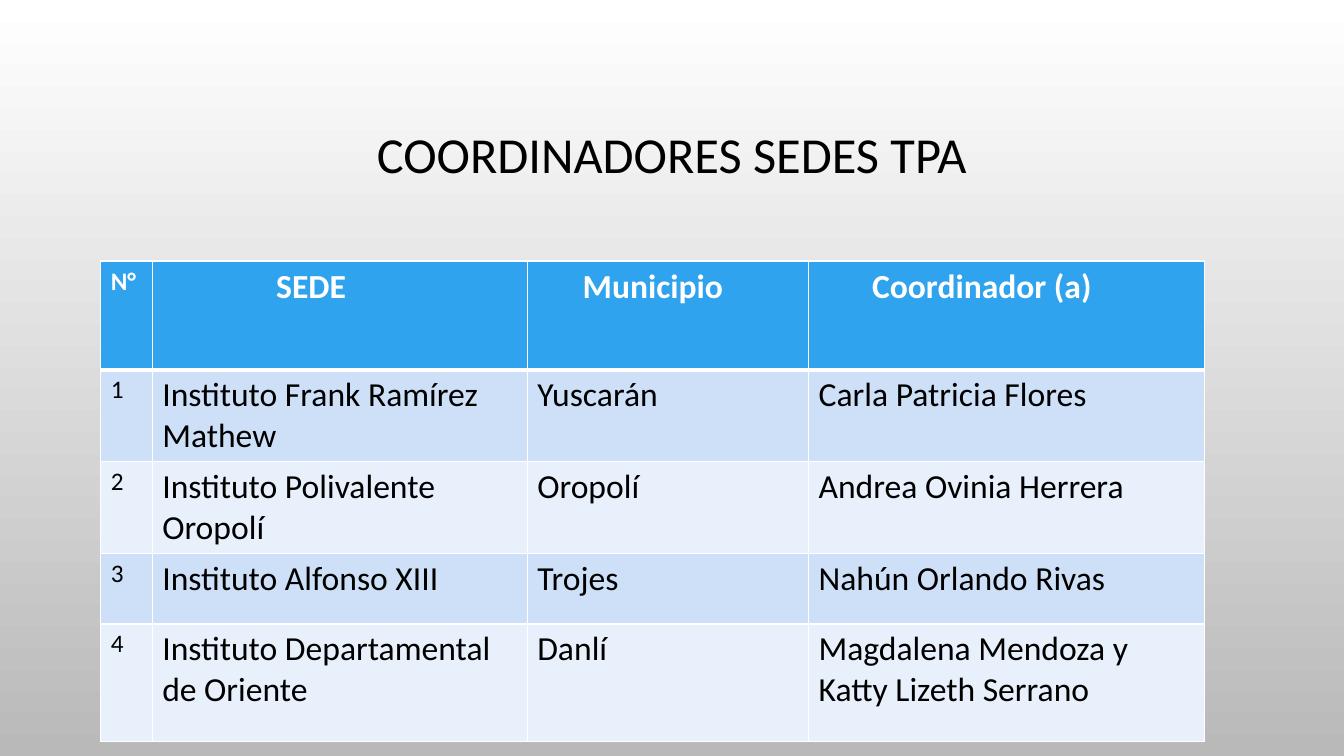
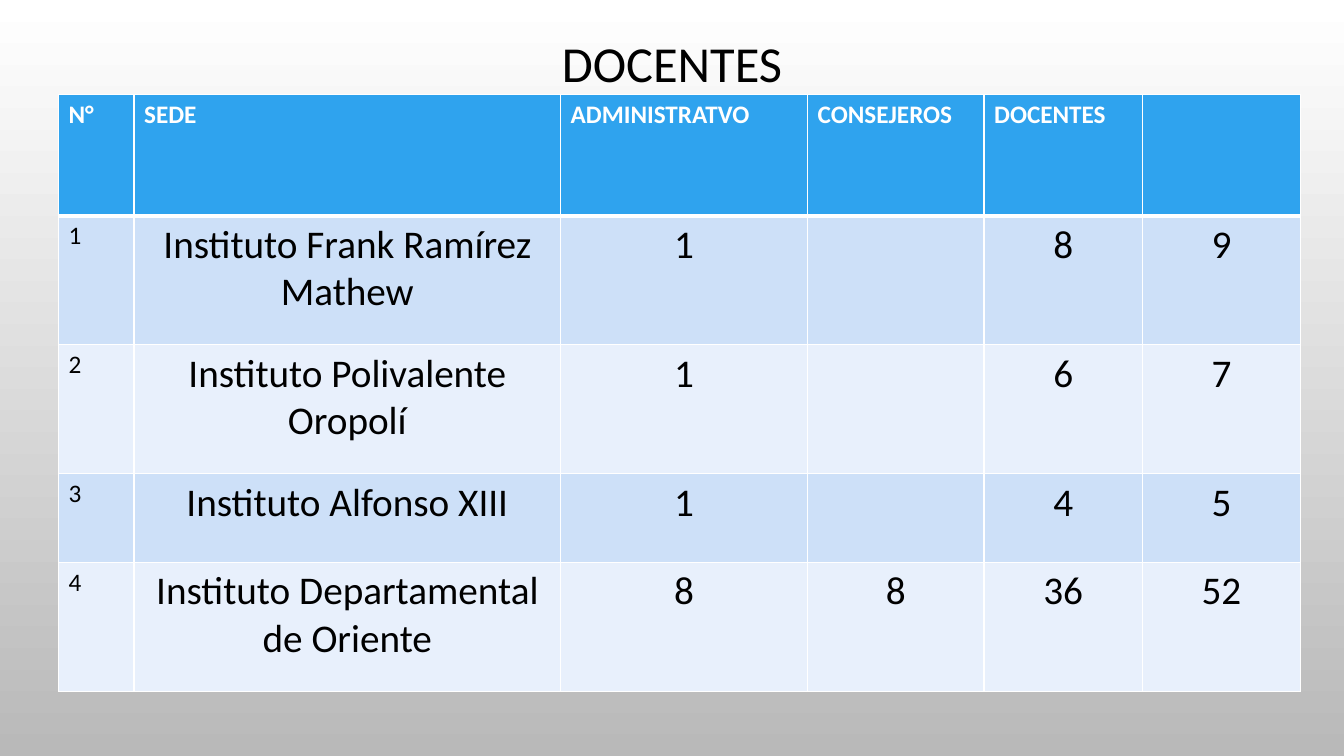
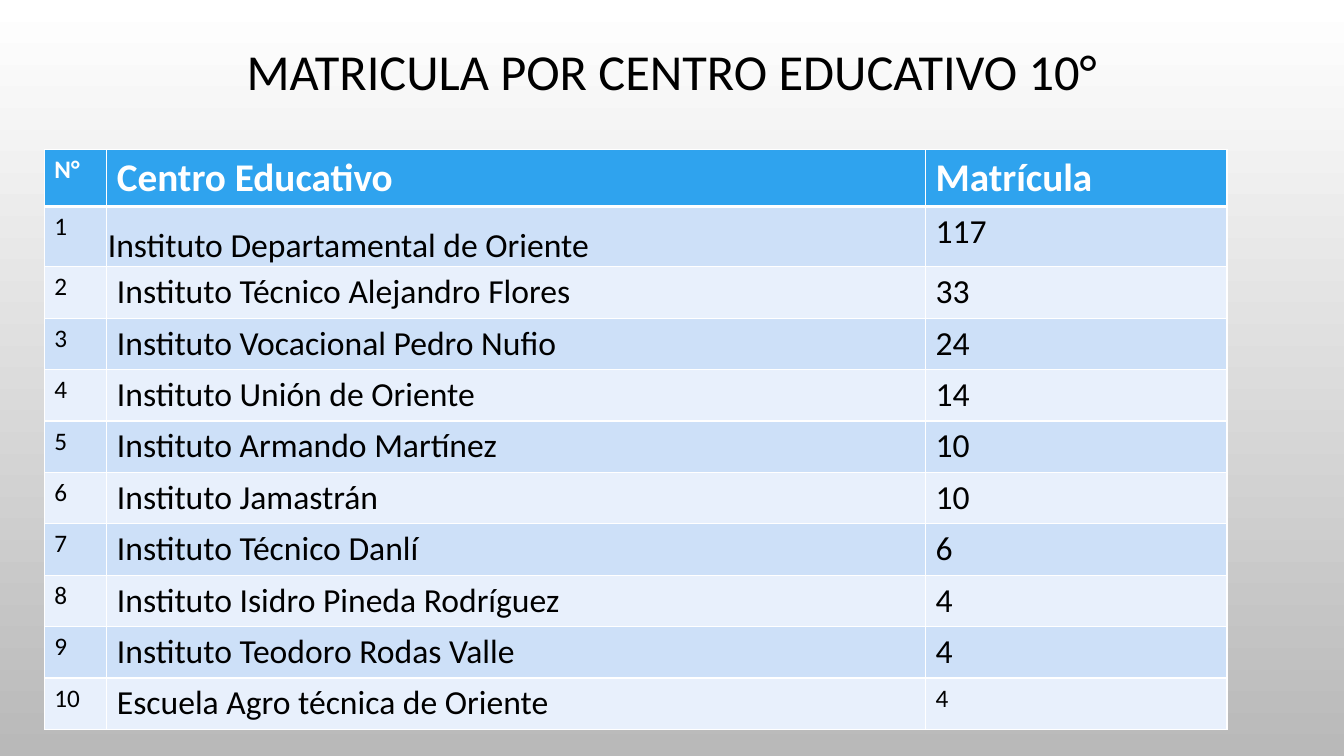
"""Build three table slides on TPA coordinators, teachers and enrolment."""
import lxml.etree
import pptx
import pptx.dml.color
import pptx.enum.text
import pptx.oxml.ns
import pptx.util

Inches = pptx.util.Inches
Pt = pptx.util.Pt
ALIGN = pptx.enum.text.PP_ALIGN
ANCHOR = pptx.enum.text.MSO_ANCHOR


class Theme:
    font = "Calibri"
    ink = "000000"
    white = "FFFFFF"
    backdrop_end = "B9B9B9"
    header = "2FA3EE"
    bands = ("CDE0F8", "E8F0FC")
    title_size = 36
    number_size = 18
    thin_rule = 1
    thick_rule = 3


def write(frame, text, size, color, bold=False, align=ALIGN.LEFT):
    paragraph = frame.paragraphs[0]
    paragraph.alignment = align
    run = paragraph.add_run()
    run.text = text
    run.font.name = Theme.font
    run.font.size = Pt(size)
    run.font.bold = bold
    run.font.color.rgb = pptx.dml.color.RGBColor.from_string(color)
    return paragraph


def rule_cell(cell, top, bottom):
    properties = cell._tc.get_or_add_tcPr()
    widths = {"lnL": Theme.thin_rule, "lnR": Theme.thin_rule, "lnT": top, "lnB": bottom}
    for side, width in widths.items():
        line = lxml.etree.SubElement(properties, pptx.oxml.ns.qn(f"a:{side}"), w=str(Pt(width)))
        fill = lxml.etree.SubElement(line, pptx.oxml.ns.qn("a:solidFill"))
        lxml.etree.SubElement(fill, pptx.oxml.ns.qn("a:srgbClr"), val=Theme.white)


slides = [
    {
        "title": "COORDINADORES SEDES TPA",
        "title_top": 0.68,
        "title_height": 1.75,
        "left": 1,
        "top": 2.59,
        "columns": [0.51, 3.72, 2.79, 3.93],
        "heights": [1.08, 0.91, 0.91, 0.7, 1.17],
        "header_size": 24,
        "header_indents": [0.1, 1.23, 0.55, 0.63],
        "body_size": 24,
        "body_align": ALIGN.LEFT,
        "header": ["SEDE", "Municipio", "Coordinador (a)"],
        "rows": [
            ["Instituto Frank Ramírez Mathew", "Yuscarán", "Carla Patricia Flores"],
            ["Instituto Polivalente Oropolí", "Oropolí", "Andrea Ovinia Herrera"],
            ["Instituto Alfonso XIII", "Trojes", "Nahún Orlando Rivas"],
            ["Instituto Departamental de Oriente", "Danlí", "Magdalena Mendoza y Katty Lizeth Serrano"],
        ],
    },
    {
        "title": "DOCENTES",
        "title_top": 0.17,
        "title_height": 0.98,
        "left": 0.58,
        "top": 0.94,
        "columns": [0.75, 4.23, 2.45, 1.75, 1.57, 1.57],
        "heights": [1.2, 1.28, 1.28, 0.88, 1.28],
        "header_size": 18,
        "header_indents": [0.1] * 6,
        "body_size": 28,
        "body_align": ALIGN.CENTER,
        "header": ["SEDE", "ADMINISTRATVO", "CONSEJEROS", "DOCENTES", ""],
        "rows": [
            ["Instituto Frank Ramírez Mathew", "1", "", "8", "9"],
            ["Instituto Polivalente Oropolí", "1", "", "6", "7"],
            ["Instituto Alfonso XIII", "1", "", "4", "5"],
            ["Instituto Departamental de Oriente", "8", "8", "36", "52"],
        ],
    },
    {
        "title": "MATRICULA POR CENTRO EDUCATIVO 10°",
        "title_top": 0,
        "title_height": 1.48,
        "left": 0.44,
        "top": 1.48,
        "columns": [0.62, 8.12, 2.99],
        "heights": [0.56, 0.6] + [0.51] * 9,
        "header_size": 28,
        "header_indents": [0.1] * 3,
        "body_size": 24,
        "body_align": ALIGN.LEFT,
        "header": ["Centro Educativo", "Matrícula"],
        "rows": [
            ["Instituto Departamental de Oriente", "117"],
            ["Instituto Técnico Alejandro Flores", "33"],
            ["Instituto Vocacional Pedro Nufio", "24"],
            ["Instituto Unión de Oriente", "14"],
            ["Instituto Armando Martínez", "10"],
            ["Instituto Jamastrán", "10"],
            ["Instituto Técnico Danlí", "6"],
            ["Instituto Isidro Pineda Rodríguez", "4"],
            ["Instituto Teodoro Rodas Valle", "4"],
            ["Escuela Agro técnica de Oriente", "4"],
        ],
        "small_cell": (10, 2),
        "low_cell": (1, 1),
    },
]

deck = pptx.Presentation()
deck.slide_width = Inches(13.33)
deck.slide_height = Inches(7.5)

backdrop = deck.slide_master.background.fill
backdrop.gradient()
backdrop.gradient_angle = 270
for stop, color in zip(backdrop.gradient_stops, (Theme.white, Theme.backdrop_end)):
    stop.color.rgb = pptx.dml.color.RGBColor.from_string(color)

for content in slides:
    slide = deck.slides.add_slide(deck.slide_layouts[6])

    title = slide.shapes.add_textbox(
        Inches(1), Inches(content["title_top"]), Inches(11.33), Inches(content["title_height"])
    ).text_frame
    title.word_wrap = True
    title.vertical_anchor = ANCHOR.MIDDLE
    heading = write(title, content["title"], Theme.title_size, Theme.ink, align=ALIGN.CENTER)
    heading.line_spacing = 0.9

    rows = [["N°"] + content["header"]]
    rows += [[str(number)] + row for number, row in enumerate(content["rows"], 1)]
    columns, heights = content["columns"], content["heights"]
    table = slide.shapes.add_table(
        len(rows), len(columns), Inches(content["left"]), Inches(content["top"]),
        Inches(sum(columns)), Inches(sum(heights)),
    ).table
    table.horz_banding = False
    for column, width in zip(table.columns, columns):
        column.width = Inches(width)
    for row, height in zip(table.rows, heights):
        row.height = Inches(height)

    for r, row in enumerate(rows):
        is_header = r == 0
        band = Theme.header if is_header else Theme.bands[(r - 1) % 2]
        top = Theme.thick_rule if r == 1 else Theme.thin_rule
        bottom = Theme.thick_rule if is_header else Theme.thin_rule
        for c, text in enumerate(row):
            cell = table.cell(r, c)
            rule_cell(cell, top, bottom)
            cell.fill.solid()
            cell.fill.fore_color.rgb = pptx.dml.color.RGBColor.from_string(band)
            if is_header:
                cell.margin_left = Inches(content["header_indents"][c])
            if (r, c) == content.get("low_cell"):
                cell.vertical_anchor = ANCHOR.BOTTOM
                cell.margin_left = cell.margin_right = cell.margin_top = Inches(0.01)
                cell.margin_bottom = 0
            if not text:
                continue
            size = content["header_size"] if is_header else content["body_size"]
            if c == 0 or (r, c) == content.get("small_cell"):
                size = Theme.number_size
            align = ALIGN.LEFT if is_header or c == 0 else content["body_align"]
            color = Theme.white if is_header else Theme.ink
            write(cell.text_frame, text, size, color, is_header, align)

deck.save("out.pptx")
